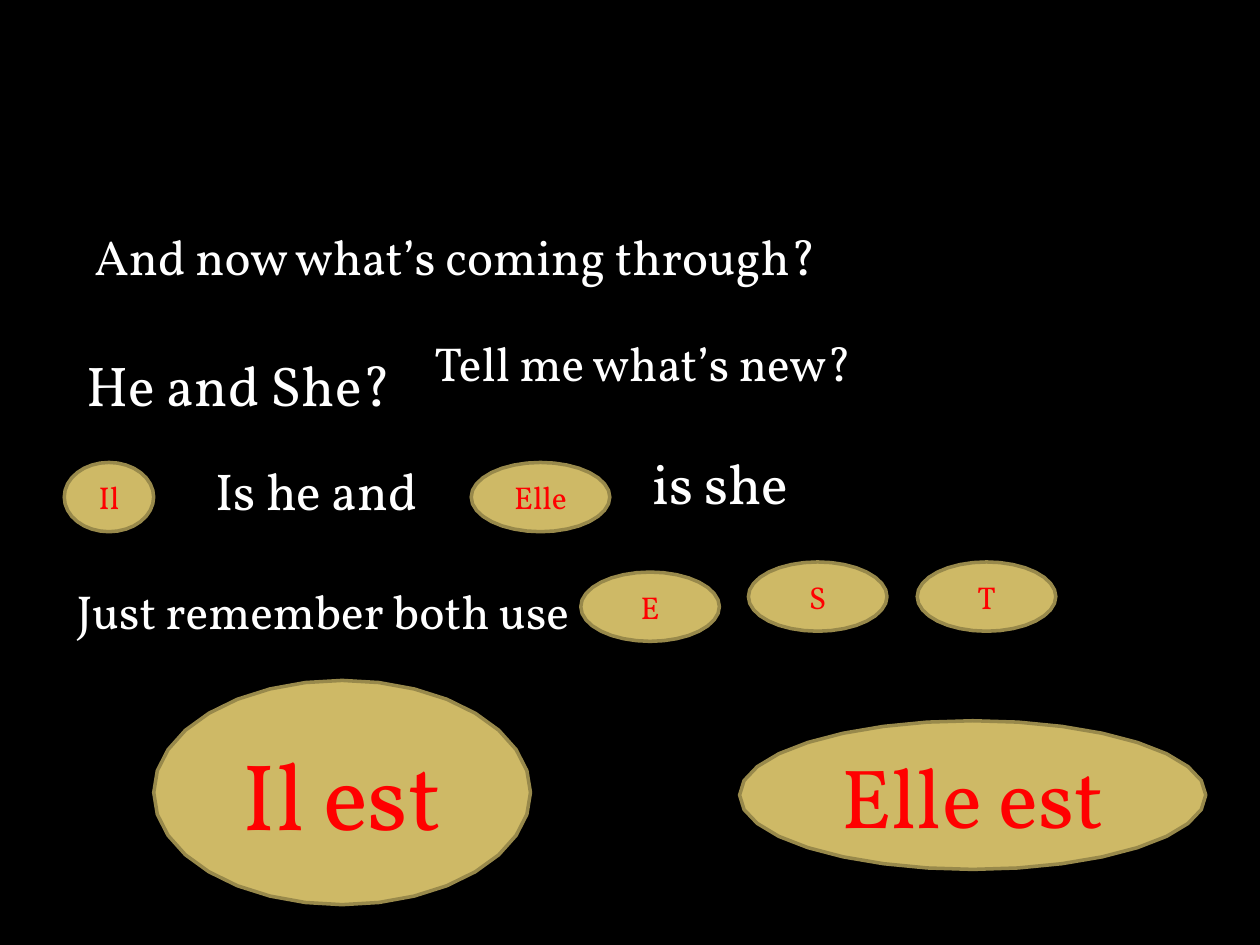
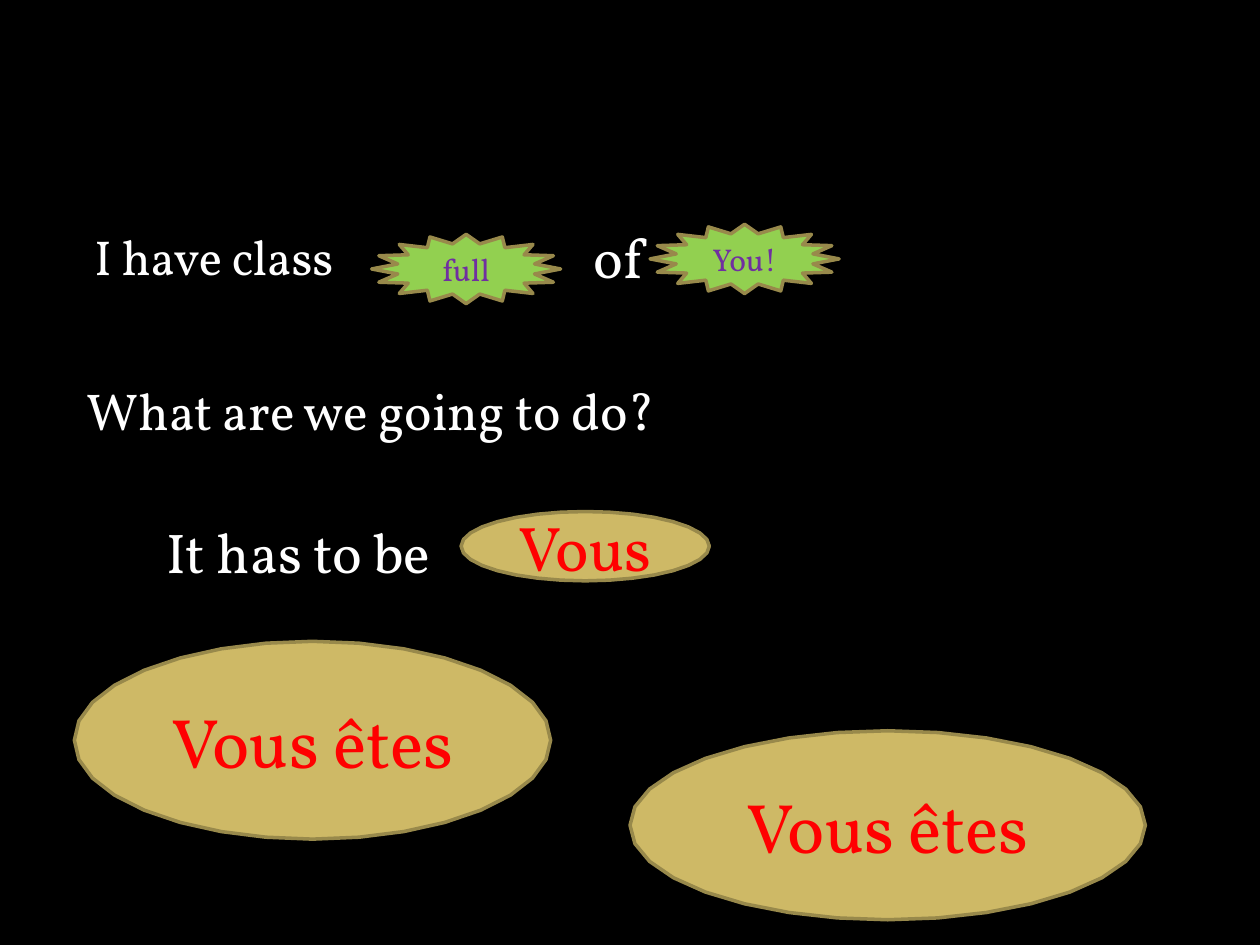
from pptx import Presentation
from pptx.dml.color import RGBColor
from pptx.enum.shapes import MSO_SHAPE
from pptx.enum.text import MSO_ANCHOR, PP_ALIGN
from pptx.util import Inches, Pt

STAR = MSO_SHAPE.STAR_16_POINT
MIDDLE = MSO_ANCHOR.MIDDLE
TOP = MSO_ANCHOR.TOP
CENTER = PP_ALIGN.CENTER
LEFT = PP_ALIGN.LEFT

WIDTH, HEIGHT = Inches(10), Inches(7.5)
COLUMNS, ROWS = 100, 75
FONT = "Vollkorn"
BLACK, WHITE, RED = "000000", "FFFFFF", "FF0000"
GOLD, DARK_GOLD = "CEB966", "98894B"
GREEN, PURPLE = "92D050", "7030A0"


def color(value):
    return RGBColor.from_string(value)


def write(frame, text, size, font_color=WHITE, align=LEFT, anchor=TOP, spacing=None, before=0):
    frame.word_wrap = True
    frame.vertical_anchor = anchor
    paragraph = frame.paragraphs[0]
    paragraph.alignment = align
    paragraph.line_spacing = spacing
    paragraph.space_before = Pt(before)
    run = paragraph.add_run()
    run.text = text
    run.font.name = FONT
    run.font.size = Pt(size)
    run.font.color.rgb = color(font_color)


class Deck:
    def __init__(self):
        self.presentation = Presentation()
        self.presentation.slide_width = WIDTH
        self.presentation.slide_height = HEIGHT
        self.slide = None

    def add_slide(self):
        self.slide = self.presentation.slides.add_slide(self.presentation.slide_layouts[6])
        fill = self.slide.background.fill
        fill.solid()
        fill.fore_color.rgb = color(BLACK)

    def place(self, column, row, columns, rows):
        across, down = WIDTH / COLUMNS, HEIGHT / ROWS
        return [round(length) for length in (column * across, row * down, columns * across, rows * down)]

    def lyric(self, text, area, size, spacing=None, indent=0):
        box = self.slide.shapes.add_textbox(*self.place(*area))
        box.text_frame.margin_left = Inches(0.1 + indent)
        write(box.text_frame, text, size, spacing=spacing, before=size * 0.2)

    def opening(self, text, columns):
        self.lyric(text, (5, 17.5, columns, 8.2), 28, indent=0.15)

    def badge(self, text, area, size=18, fill=GOLD, font_color=RED, depth=0.5):
        shape = self.slide.shapes.add_shape(STAR, *self.place(*area))
        shape.adjustments[0] = depth
        shape.shadow.inherit = False
        shape.fill.solid()
        shape.fill.fore_color.rgb = color(fill)
        shape.line.color.rgb = color(DARK_GOLD)
        shape.line.width = Pt(2)
        write(shape.text_frame, text, size, font_color, CENTER, MIDDLE)

    def burst(self, text, column, row):
        self.badge(text, (column, row, 15, 5.5), fill=GREEN, font_color=PURPLE, depth=0.369)


def he_and_she(deck):
    deck.add_slide()
    deck.opening("And now what’s coming through?", 90)
    deck.lyric("He and She?", (5.9, 27.3, 44.1, 8.2), 32)
    deck.lyric("Tell me what’s new?", (33.5, 26.5, 38.6, 8.2), 27.2, 0.9)
    deck.lyric("Is he and", (16.1, 35.9, 19.7, 8.2), 29.6)
    deck.lyric("Just remember both use", (5.1, 46.2, 41.7, 8.2), 27.2, 0.9)
    deck.lyric("is she", (50.8, 35.1, 15.7, 8.7), 32)
    deck.badge("Il", (5.1, 36.7, 7.1, 5.5))
    for text, column, row in (("Elle", 37.4, 36.7), ("E", 46.1, 45.4), ("S", 59.4, 44.6), ("T", 72.8, 44.6)):
        deck.badge(text, (column, row, 11, 5.5))
    deck.badge("Elle est", (58.7, 57.2, 37, 11.8), 48)
    deck.badge("Il est", (12.2, 54, 29.9, 17.8), 54)


def vous(deck):
    deck.add_slide()
    deck.opening("I have class", 25.3)
    deck.lyric("of", (46.1, 17.8, 7.9, 6.3), 32, 0.9)
    deck.lyric("What are we going to do?", (5.9, 29.6, 49.6, 7.9), 29.6)
    deck.lyric("It has to be", (12.2, 40.6, 41.7, 8.2), 32)
    deck.burst("full", 29.5, 18.6)
    deck.burst("You!", 51.6, 17.8)
    deck.badge("Vous", (36.6, 40.6, 19.7, 5.5), 36)
    for area in ((50, 58, 40.9, 15), (5.9, 50.9, 37.8, 15.7)):
        deck.badge("Vous êtes", area, 40)


def main():
    deck = Deck()
    he_and_she(deck)
    vous(deck)
    deck.presentation.save("out.pptx")


if __name__ == "__main__":
    main()
